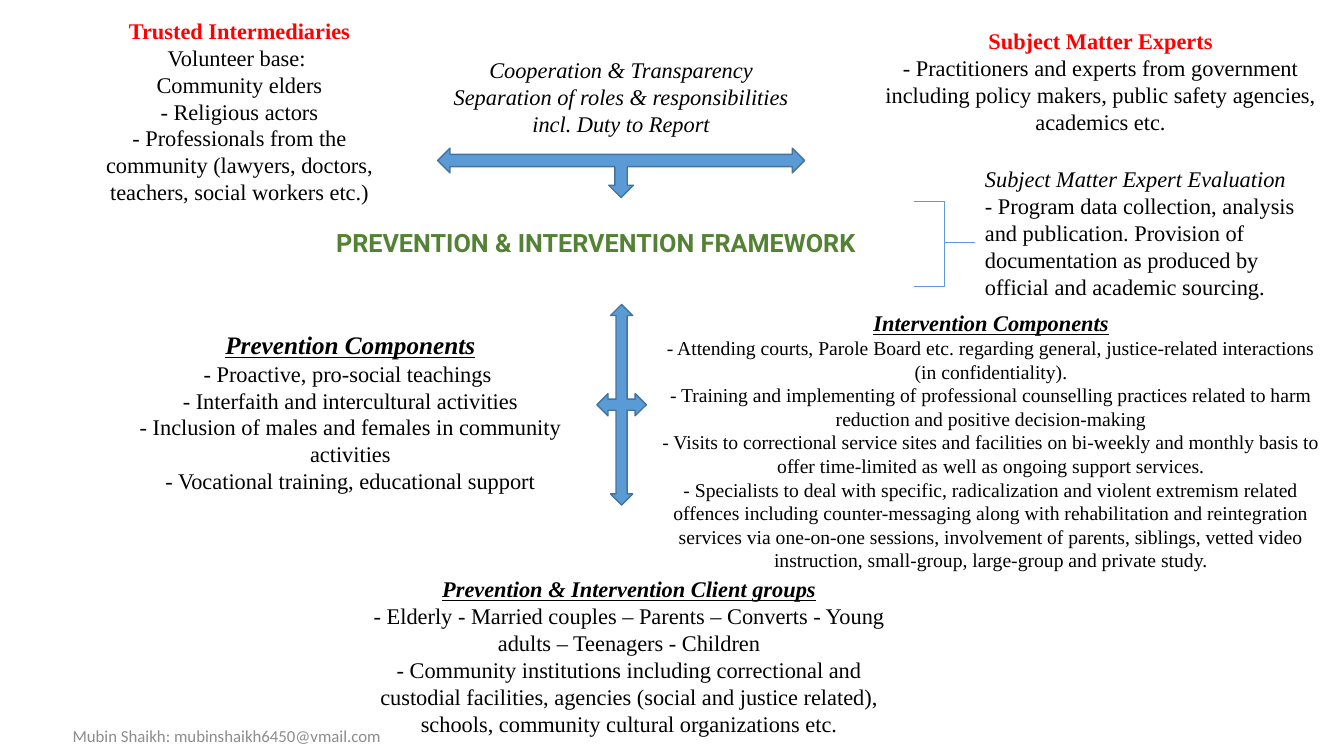
"""Build a one-slide overview of a prevention and intervention framework."""
import copy
from dataclasses import dataclass

import pptx
import pptx.dml.color
import pptx.enum.shapes
import pptx.enum.text
import pptx.oxml.ns
import pptx.util

Inches = pptx.util.Inches
Shape = pptx.enum.shapes.MSO_SHAPE
Align = pptx.enum.text.PP_ALIGN
Anchor = pptx.enum.text.MSO_ANCHOR
AutoSize = pptx.enum.text.MSO_AUTO_SIZE


@dataclass(frozen=True)
class Theme:
    """Colours, fonts and type sizes."""
    black: str = "000000"
    red: str = "FF0000"
    green: str = "548235"
    grey: str = "8C8C8C"
    blue: str = "5B9BD5"
    dark_blue: str = "43739E"
    serif: str = "Times New Roman"
    title_font: str = "Roboto"
    footer_font: str = "Calibri"
    large: int = 18
    body: int = 16
    small: int = 14
    footer: int = 12


@dataclass(frozen=True)
class Style:
    """Look of a piece of text."""
    size: int
    color: str = Theme.black
    font: str = Theme.serif
    bold: bool = False
    italic: bool = False
    underline: bool = False


BODY = Style(Theme.body)
SMALL = Style(Theme.small)
ITALIC = Style(Theme.body, italic=True)
ROLE = Style(Theme.body, Theme.red, bold=True)
HEADING = Style(Theme.body, bold=True, italic=True, underline=True)
LARGE_HEADING = Style(Theme.large, bold=True, italic=True, underline=True)
TITLE = Style(Theme.large, Theme.green, Theme.title_font, bold=True)
FOOTER = Style(Theme.footer, Theme.grey, Theme.footer_font)


class FrameworkSlide:
    """Holds the theme and the current slide and draws its elements."""

    def __init__(self, deck, theme):
        """Add a title-only slide."""
        self.theme = theme
        self.slide = deck.slides.add_slide(deck.slide_layouts[5])

    def color(self, value):
        """Return a colour object."""
        return pptx.dml.color.RGBColor.from_string(value)

    def format_span(self, span, style):
        """Apply a style to one run."""
        font = span.font
        font.name, font.size = style.font, pptx.util.Pt(style.size)
        font.bold, font.italic, font.underline = style.bold, style.italic, style.underline
        font.color.rgb = self.color(style.color)

    def fill_box(self, box, text, first, rest, align, anchor, grow):
        """Fill a box, giving its first line one style and the other lines another."""
        frame = box.text_frame
        frame.text = text
        frame.word_wrap = True
        frame.vertical_anchor = anchor
        frame.auto_size = AutoSize.SHAPE_TO_FIT_TEXT if grow else AutoSize.NONE
        style = first
        for para in frame.paragraphs:
            para.alignment = align
            for span in para.runs:
                self.format_span(span, style)
                style = rest
            for line_break in para._p.findall(pptx.oxml.ns.qn("a:br")):
                line_break.append(copy.deepcopy(line_break.getprevious().rPr))

    def title(self, place, text):
        """Place and format the title."""
        box = self.slide.shapes.title
        box.left, box.top, box.width, box.height = map(Inches, place)
        self.fill_box(box, text, TITLE, TITLE, Align.CENTER, Anchor.TOP, True)

    def text(self, place, text, first, rest, align=Align.CENTER, anchor=Anchor.TOP, grow=True):
        """Add a text box."""
        box = self.slide.shapes.add_textbox(*map(Inches, place))
        self.fill_box(box, text, first, rest, align, anchor, grow)

    def arrow(self, kind, place, rotation=0):
        """Add a block arrow."""
        arrow = self.slide.shapes.add_shape(kind, *map(Inches, place))
        arrow.shadow.inherit = False
        arrow.rotation = rotation
        arrow.fill.solid()
        arrow.fill.fore_color.rgb = self.color(self.theme.blue)
        arrow.line.color.rgb = self.color(self.theme.dark_blue)
        arrow.line.width = pptx.util.Pt(1)

    def brace(self, place):
        """Add a square-cornered brace."""
        brace = self.slide.shapes.add_shape(Shape.RIGHT_BRACE, *map(Inches, place))
        brace.shadow.inherit = False
        brace.adjustments[0], brace.adjustments[1] = 0, 0.48
        brace.fill.background()
        brace.line.color.rgb = self.color(self.theme.blue)
        brace.line.width = pptx.util.Pt(0.5)


def main():
    """Build and save the deck."""
    deck = pptx.Presentation()
    deck.slide_width, deck.slide_height = Inches(13.33), Inches(7.5)
    page = FrameworkSlide(deck, Theme())

    page.title((2.2, 2.21, 7.42, 0.4), "PREVENTION & INTERVENTION FRAMEWORK")
    page.arrow(Shape.LEFT_RIGHT_UP_ARROW, (4.34, 1.47, 3.64, 0.49), 180)
    page.text(
        (0.89, 0.12, 2.97, 1.99),
        "Trusted Intermediaries\vVolunteer base: \vCommunity elders\n"
        "- Religious actors\v- Professionals from the community "
        "(lawyers, doctors, teachers, social workers etc.)", ROLE, BODY)
    page.text(
        (8.62, 0.22, 4.59, 1.18),
        "Subject Matter Experts\v- Practitioners and experts from government including "
        "policy makers, public safety agencies, academics etc.", ROLE, BODY)
    page.text(
        (0.89, 3.22, 5.17, 1.75),
        "Prevention Components\v- Proactive, pro-social teachings \v"
        "- Interfaith and intercultural activities\v"
        "- Inclusion of males and females in community activities\v"
        "- Vocational training, educational support", LARGE_HEADING, BODY)
    page.text(
        (6.45, 3.02, 6.76, 2.73),
        "Intervention Components\v- Attending courts, Parole Board etc. regarding general, "
        "justice-related interactions (in confidentiality).\v"
        "- Training and implementing of professional counselling practices related to harm "
        "reduction and positive decision-making\n"
        "- Visits to correctional service sites and facilities on bi-weekly and monthly basis "
        "to offer time-limited as well as ongoing support services.\v"
        "- Specialists to deal with specific, radicalization and violent extremism related "
        "offences including counter-messaging along with rehabilitation and reintegration "
        "services via one-on-one sessions, involvement of parents, siblings, vetted video "
        "instruction, small-group, large-group and private study.", HEADING, SMALL)
    page.text(
        (3.51, 5.66, 5.46, 1.72),
        "Prevention & Intervention Client groups\v- Elderly - Married couples – Parents – "
        "Converts - Young adults – Teenagers - Children\n"
        "- Community institutions including correctional and custodial facilities, agencies "
        "(social and justice related), schools, community cultural organizations etc.",
        HEADING, BODY)
    page.text(
        (4.32, 0.51, 3.68, 0.91),
        "Cooperation & Transparency\v"
        "Separation of roles & responsibilities incl. Duty to Report", ITALIC, ITALIC)
    page.arrow(Shape.QUAD_ARROW, (5.92, 3.02, 0.49, 1.99))
    page.text(
        (9.67, 1.59, 3.59, 1.45),
        "Subject Matter Expert Evaluation\v- Program data collection, analysis and "
        "publication. Provision of documentation as produced by official and academic "
        "sourcing.", ITALIC, BODY, Align.LEFT)
    page.brace((9.07, 2, 0.6, 0.84))
    page.text((0, 7.1, 4.5, 0.4), "Mubin Shaikh: mubinshaikh6450@vmail.com",
              FOOTER, FOOTER, anchor=Anchor.MIDDLE, grow=False)

    deck.save("out.pptx")


if __name__ == "__main__":
    main()
